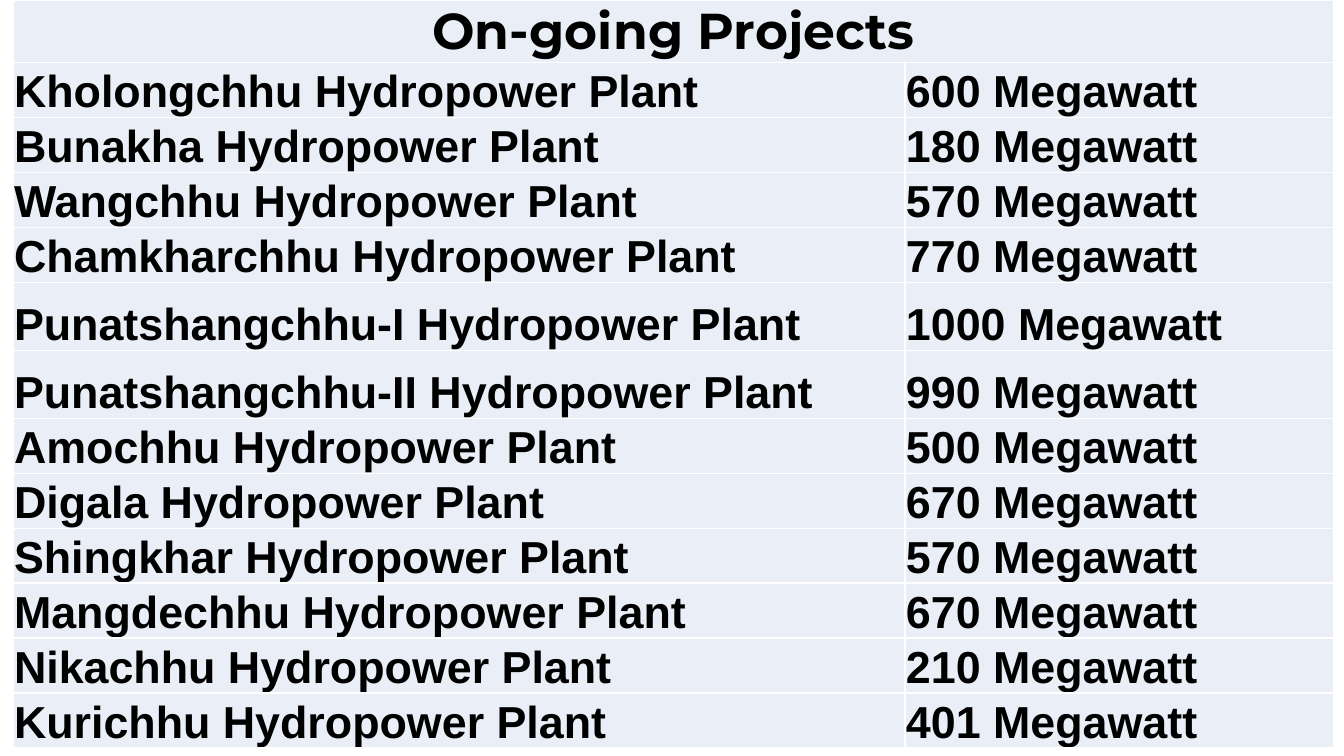
from lxml import etree
from pptx import Presentation
from pptx.dml.color import RGBColor
from pptx.enum.text import MSO_ANCHOR, PP_ALIGN
from pptx.oxml.ns import qn
from pptx.util import Pt

BOTTOM = MSO_ANCHOR.BOTTOM
LEFT, CENTER = PP_ALIGN.LEFT, PP_ALIGN.CENTER
PALE = RGBColor(0xEA, 0xEF, 0xF7)
BLACK = RGBColor(0, 0, 0)
WHITE = RGBColor(0xFF, 0xFF, 0xFF)
SCALE = 12192000 / 1344
WIDTHS = (892, 429)
HEAD, ROW, TALL = 61, 55, 68
PLANTS = (
    ("Kholongchhu", 600, ROW),
    ("Bunakha", 180, ROW),
    ("Wangchhu", 570, ROW),
    ("Chamkharchhu", 770, ROW),
    ("Punatshangchhu-I", 1000, TALL),
    ("Punatshangchhu-II", 990, TALL),
    ("Amochhu", 500, ROW),
    ("Digala", 670, ROW),
    ("Shingkhar", 570, ROW),
    ("Mangdechhu", 670, ROW),
    ("Nikachhu", 210, ROW),
    ("Kurichhu", 401, ROW),
)


def px(size):
    return round(size * SCALE)


def add_lines(cell):
    props = cell._tc.get_or_add_tcPr()
    for spot, side in enumerate(("lnL", "lnR", "lnT", "lnB")):
        line = etree.Element(qn(f"a:{side}"), w=str(Pt(1)))
        fill = etree.SubElement(line, qn("a:solidFill"))
        etree.SubElement(fill, qn("a:srgbClr"), val=str(WHITE))
        props.insert(spot, line)


def style_cell(cell):
    cell.fill.solid()
    cell.fill.fore_color.rgb = PALE
    cell.vertical_anchor = BOTTOM
    cell.margin_left = cell.margin_right = cell.margin_top = px(1)
    cell.margin_bottom = 0
    add_lines(cell)


def write(cell, text, size=32, face="Arial", align=LEFT):
    cell.text = text
    para = cell.text_frame.paragraphs[0]
    para.alignment = align
    font = para.font
    font.name, font.size, font.bold = face, Pt(size), True
    font.color.rgb = BLACK


def add_grid(slide):
    heights = [HEAD] + [tall for _, _, tall in PLANTS]
    frame = slide.shapes.add_table(
        len(heights), len(WIDTHS), px(13), 0, px(sum(WIDTHS)), px(sum(heights)))
    table = frame.table
    table.first_row = table.horz_banding = False
    for col, width in zip(table.columns, WIDTHS):
        col.width = px(width)
    for row, height in zip(table.rows, heights):
        row.height = px(height)
    for cell in table.iter_cells():
        style_cell(cell)
    return table


def main():
    deck = Presentation()
    deck.slide_width, deck.slide_height = px(1344), px(756)
    slide = deck.slides.add_slide(deck.slide_layouts[6])
    table = add_grid(slide)
    head = table.cell(0, 0)
    head.merge(table.cell(0, 1))
    write(head, "On-going Projects", 36, "Montserrat", CENTER)
    for row, (name, power, _) in enumerate(PLANTS, 1):
        write(table.cell(row, 0), f"{name} Hydropower Plant")
        write(table.cell(row, 1), f"{power} Megawatt")
    deck.save("out.pptx")


if __name__ == "__main__":
    main()
